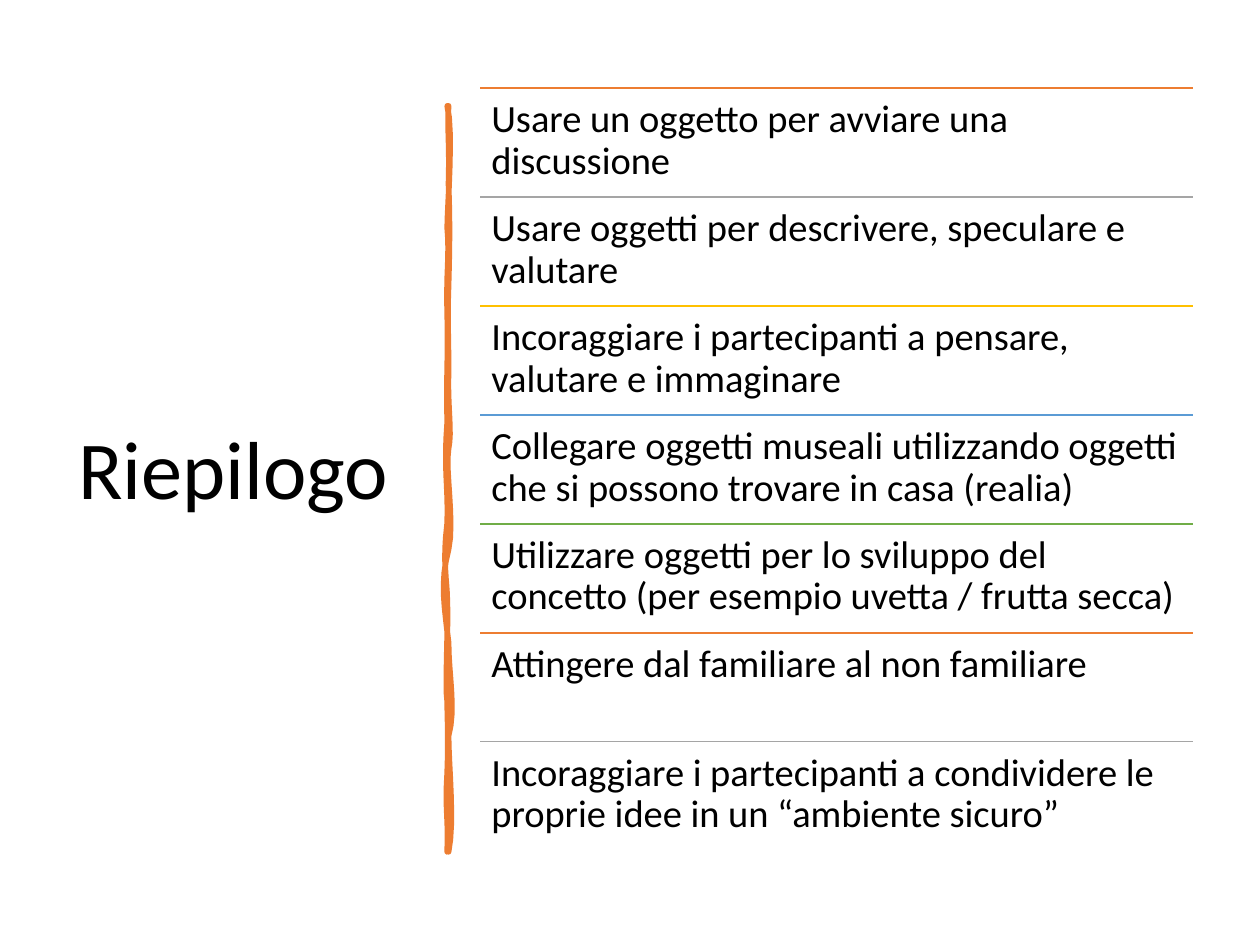
from lxml.etree import SubElement
from pptx import Presentation
from pptx.dml.color import RGBColor
from pptx.enum.shapes import MSO_CONNECTOR as Connector
from pptx.enum.text import MSO_ANCHOR as Anchor, MSO_AUTO_SIZE as AutoSize, PP_ALIGN as Align
from pptx.oxml.ns import qn
from pptx.util import Inches, Pt

FONT = "Calibri"
BLACK = RGBColor(0x00, 0x00, 0x00)
ORANGE = RGBColor(0xED, 0x7D, 0x31)
GRAY = RGBColor(0xA5, 0xA5, 0xA5)
GOLD = RGBColor(0xFF, 0xC0, 0x00)
BLUE = RGBColor(0x5B, 0x9B, 0xD5)
GREEN = RGBColor(0x70, 0xAD, 0x47)
RULE_COLORS = [ORANGE, GRAY, GOLD, BLUE, GREEN]

SUMMARY = [
    "Usare un oggetto per avviare una discussione",
    "Usare oggetti per descrivere, speculare e valutare",
    "Incoraggiare i partecipanti a pensare, valutare e immaginare",
    "Collegare oggetti museali utilizzando oggetti che si possono trovare in casa (realia)",
    "Utilizzare oggetti per lo sviluppo del concetto (per esempio uvetta / frutta secca)",
    "Attingere dal familiare al non familiare",
    "Incoraggiare i partecipanti a condividere le proprie idee in un “ambiente sicuro”",
]

# Brush stroke in hundredths of an inch: two control points and an end per curve,
# down the right edge, then up the left edge.
STROKE_START = (1, 0)
STROKE_CURVES = [
    (0, 19, 2, 32, 1, 62), (2, 90, 2, 107, 1, 142), (0, 174, 1, 178, 1, 210),
    (0, 241, 4, 258, 1, 272), (-2, 288, 6, 330, 1, 352), (-6, 378, -2, 399, 1, 426),
    (1, 451, 7, 479, 1, 500), (1, 522, 6, 569, 1, 592), (1, 591, 0, 592, 0, 592),
    (1, 561, -2, 560, 0, 529), (1, 499, 0, 486, 0, 473), (-2, 462, 1, 410, 0, 393),
    (0, 378, -4, 363, 0, 331), (1, 302, -3, 289, 0, 251), (-1, 216, 1, 195, 0, 166),
    (-1, 132, 2, 119, 0, 97), (0, 81, 5, 20, 0, 0),
]
CURVE_STEPS = 8


def add_run(paragraph, text, size):
    paragraph.line_spacing = 0.9
    run = paragraph.add_run()
    run.text = text
    run.font.name = FONT
    run.font.size = Pt(size)
    run.font.color.rgb = BLACK


def place_title(slide, left, top, width, height):
    title = slide.shapes.title
    title.left, title.top, title.width, title.height = left, top, width, height
    frame = title.text_frame
    frame.word_wrap = True
    frame.auto_size = AutoSize.NONE
    frame.vertical_anchor = Anchor.MIDDLE
    frame.paragraphs[0].alignment = Align.LEFT
    add_run(frame.paragraphs[0], "Riepilogo", 47)


def stroke_points():
    """Yield points along the cubic curves of the brush stroke."""
    x0, y0 = STROKE_START
    for x1, y1, x2, y2, x3, y3 in STROKE_CURVES:
        for step in range(1, CURVE_STEPS + 1):
            t = step / CURVE_STEPS
            weights = ((1 - t) ** 3, 3 * t * (1 - t) ** 2, 3 * t * t * (1 - t), t ** 3)
            yield (sum(w * x for w, x in zip(weights, (x0, x1, x2, x3))),
                   sum(w * y for w, y in zip(weights, (y0, y1, y2, y3))))
        x0, y0 = x3, y3


def draw_brush_divider(slide, left, top):
    def locate(x, y):
        return left + Inches(x / 100), top + Inches(y / 100)

    builder = slide.shapes.build_freeform(*locate(*STROKE_START))
    builder.add_line_segments([locate(x, y) for x, y in stroke_points()], close=True)
    divider = builder.convert_to_shape()
    divider.shadow.inherit = False
    divider.fill.solid()
    divider.fill.fore_color.rgb = ORANGE
    divider.line.color.rgb = ORANGE
    divider.line.width = Pt(3.25)


def draw_summary_list(slide, left, top, width, height):
    """Stack equal rows, each under its own coloured rule."""
    group = slide.shapes.add_group_shape()
    row_height = height // len(SUMMARY)
    for index, point in enumerate(SUMMARY):
        row_top = top + index * row_height
        rule = group.shapes.add_connector(
            Connector.STRAIGHT, left, row_top, left + width, row_top)
        rule.line.color.rgb = RULE_COLORS[index % len(RULE_COLORS)]
        rule.line.width = Pt(1)
        SubElement(rule.element.spPr, qn("a:effectLst"))

        frame = group.shapes.add_textbox(left, row_top, width, row_height).text_frame
        frame.word_wrap = True
        frame.vertical_anchor = Anchor.TOP
        frame.margin_left = frame.margin_right = Inches(0.09)
        frame.margin_top = frame.margin_bottom = Inches(0.09)
        add_run(frame.paragraphs[0], point, 22)


def main():
    prs = Presentation()
    prs.slide_width, prs.slide_height = Inches(10), Inches(7.5)
    slide = prs.slides.add_slide(prs.slide_layouts[5])
    place_title(slide, Inches(0.52), Inches(0.7), Inches(2.8), Inches(6.11))
    draw_brush_divider(slide, Inches(3.55), Inches(0.84))
    draw_summary_list(slide, Inches(3.81), Inches(0.7), Inches(5.66), Inches(6.05))
    prs.save("out.pptx")


if __name__ == "__main__":
    main()
